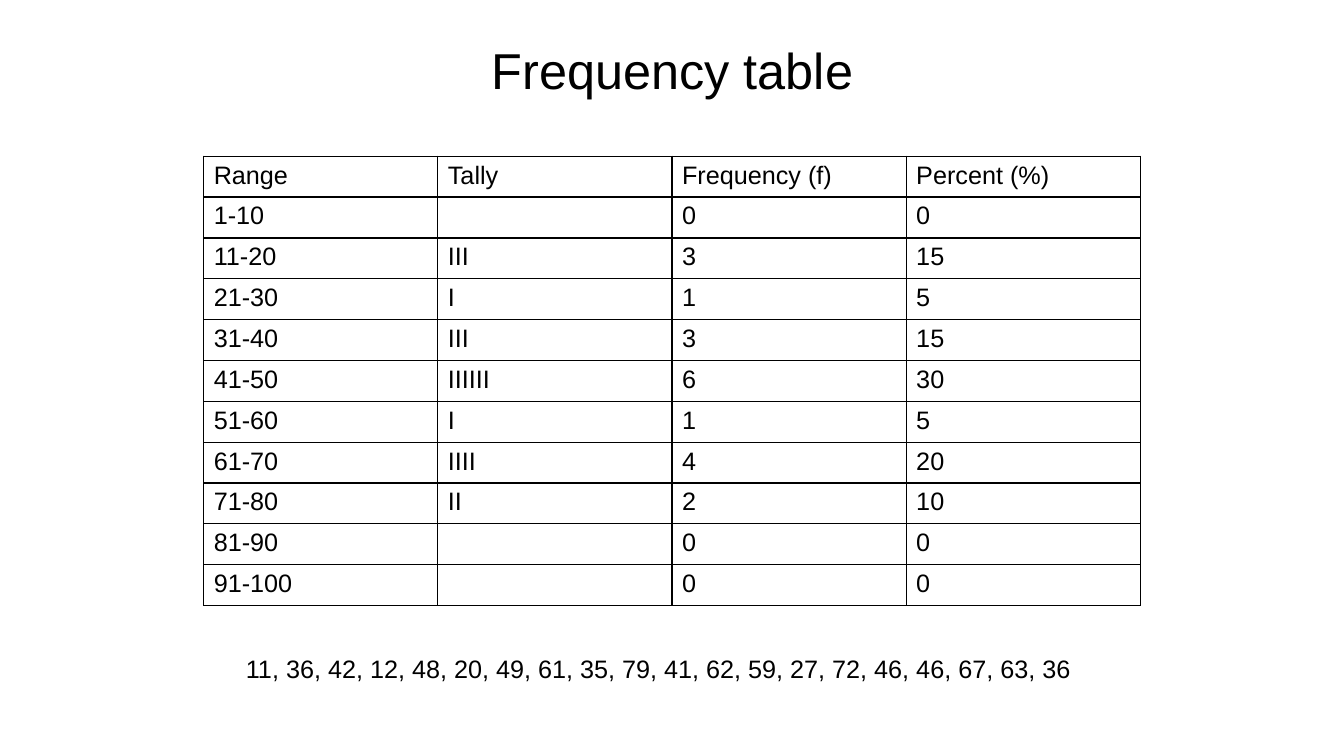
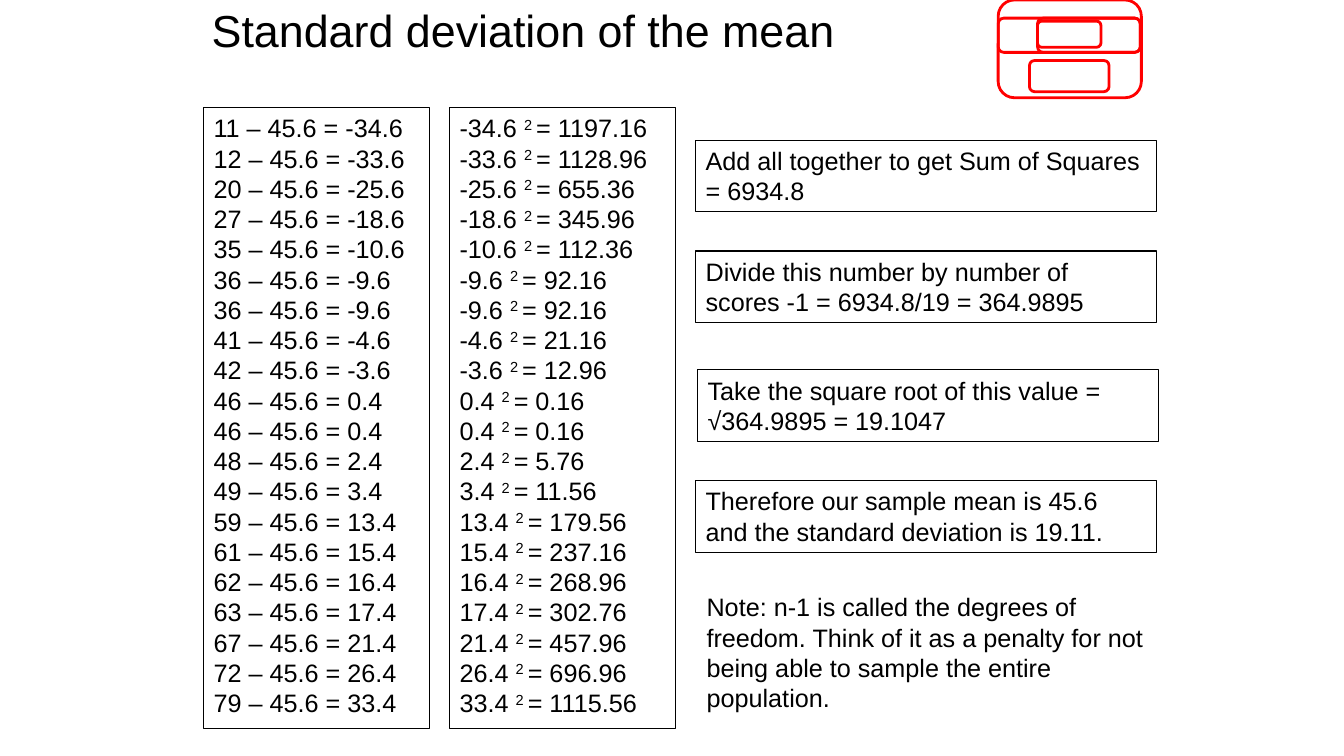
from lxml import etree
from pptx import Presentation
from pptx.dml.color import RGBColor
from pptx.enum.shapes import MSO_SHAPE
from pptx.enum.text import MSO_ANCHOR, PP_ALIGN
from pptx.oxml.ns import qn
from pptx.util import Emu, Pt

# Shared look; one px is a hundredth of an inch
PX = 9144
FONT = "Arial"
BODY_SIZE = 18
BLACK = RGBColor(0x00, 0x00, 0x00)
RED = RGBColor(0xFF, 0x00, 0x00)
ROUNDED = MSO_SHAPE.ROUNDED_RECTANGLE
LEFT, CENTER = PP_ALIGN.LEFT, PP_ALIGN.CENTER
MIDDLE = MSO_ANCHOR.MIDDLE
TITLE_ONLY = 5

# Scores behind both slides
SCORES = [11, 36, 42, 12, 48, 20, 49, 61, 35, 79,
          41, 62, 59, 27, 72, 46, 46, 67, 63, 36]
MEAN = sum(SCORES) / len(SCORES)


def px(*lengths):
    return [Emu(length * PX) for length in lengths]


def format_runs(text_frame, size=BODY_SIZE):
    for paragraph in text_frame.paragraphs:
        for run in paragraph.runs:
            run.font.name = FONT
            run.font.size = Pt(size)
            run.font.color.rgb = BLACK


def add_titled_slide(presentation, title, box, size, alignment):
    slide = presentation.slides.add_slide(presentation.slide_layouts[TITLE_ONLY])
    shape = slide.shapes.title
    shape.left, shape.top, shape.width, shape.height = px(*box)
    text_frame = shape.text_frame
    text_frame.text = title
    text_frame.vertical_anchor = MIDDLE
    text_frame.paragraphs[0].alignment = alignment
    format_runs(text_frame, size)
    return slide


def add_text(slide, box, text, framed=False):
    shape = slide.shapes.add_textbox(*px(*box))
    text_frame = shape.text_frame
    text_frame.word_wrap = True
    text_frame.text = text
    format_runs(text_frame)
    if framed:
        shape.line.color.rgb = BLACK
        shape.line.width = Pt(0.75)
    return shape


def add_squares(slide, box, deviations):
    text_frame = add_text(slide, box, "", framed=True).text_frame
    for index, deviation in enumerate(deviations):
        paragraph = text_frame.add_paragraph() if index else text_frame.paragraphs[0]
        for text in (f"{deviation:.1f} ", "2 ", f"= {deviation ** 2:.2f}"):
            paragraph.add_run().text = text
        paragraph.runs[1]._r.get_or_add_rPr().set("baseline", "30000")
    format_runs(text_frame)


def set_cell_borders(cell):
    properties = cell._tc.get_or_add_tcPr()
    for side in ("a:lnL", "a:lnR", "a:lnT", "a:lnB"):
        line = etree.SubElement(properties, qn(side), w=str(Pt(1)))
        fill = etree.SubElement(line, qn("a:solidFill"))
        etree.SubElement(fill, qn("a:srgbClr"), val=str(BLACK))


def add_grid(slide, box, rows):
    table = slide.shapes.add_table(len(rows), len(rows[0]), *px(*box)).table
    table.first_row = False
    table.horz_banding = False
    for row_index, row in enumerate(rows):
        for column_index, text in enumerate(row):
            cell = table.cell(row_index, column_index)
            cell.text = text
            format_runs(cell.text_frame)
            set_cell_borders(cell)
            cell.fill.background()


def add_outline(slide, box):
    shape = slide.shapes.add_shape(ROUNDED, *px(*box))
    shape.shadow.inherit = False
    shape.fill.background()
    shape.line.color.rgb = RED
    shape.line.width = Pt(2)


def frequency_rows():
    rows = [("Range", "Tally", "Frequency (f)", "Percent (%)")]
    for low in range(1, 100, 10):
        high = low + 9
        count = sum(low <= score <= high for score in SCORES)
        percent = count * 100 // len(SCORES)
        rows.append((f"{low}-{high}", "I" * count, str(count), str(percent)))
    return rows


def build_frequency_slide(presentation):
    slide = add_titled_slide(presentation, "Frequency table",
                             (217, 30, 900, 77), 36, CENTER)
    add_grid(slide, (202, 155, 929, 446), frequency_rows())
    add_text(slide, (234, 643, 858, 40), ", ".join(map(str, SCORES)))


def build_deviation_slide(presentation):
    slide = add_titled_slide(presentation, "Standard deviation of the mean",
                             (200, -9, 900, 77), 32, LEFT)

    # Deviations and their squares
    ordered = sorted(SCORES)
    deviations = [score - MEAN for score in ordered]
    differences = [f"{score} – {MEAN:.1f} = {deviation:.1f}"
                   for score, deviation in zip(ordered, deviations)]
    add_text(slide, (202, 107, 224, 616), "\n".join(differences), framed=True)
    add_squares(slide, (446, 107, 224, 616), deviations)

    # Steps of the calculation
    steps = [
        (690, 139, "Add all together to get Sum of Squares = 6934.8"),
        (690, 249, "Divide this number by number of scores -1 = 6934.8/19 = 364.9895"),
        (692, 367, "Take the square root of this value = √364.9895 = 19.1047"),
        (690, 477, "Therefore our sample mean is 45.6 and the standard deviation is 19.11."),
    ]
    for left, top, text in steps:
        add_text(slide, (left, top, 457, 71), text, framed=True)
    add_text(slide, (691, 582, 456, 131),
             "Note: n-1 is called the degrees of freedom. Think of it as a penalty "
             "for not being able to sample the entire population.")

    # Red outline drawing
    for box in ((1029, 21, 63, 26), (1029, 18, 102, 34), (990, 18, 141, 34),
                (1021, 60, 79, 31), (990, 0, 142, 97)):
        add_outline(slide, box)


def main():
    presentation = Presentation()
    presentation.slide_width, presentation.slide_height = px(1333, 750)
    build_frequency_slide(presentation)
    build_deviation_slide(presentation)
    presentation.save("out.pptx")


if __name__ == "__main__":
    main()
